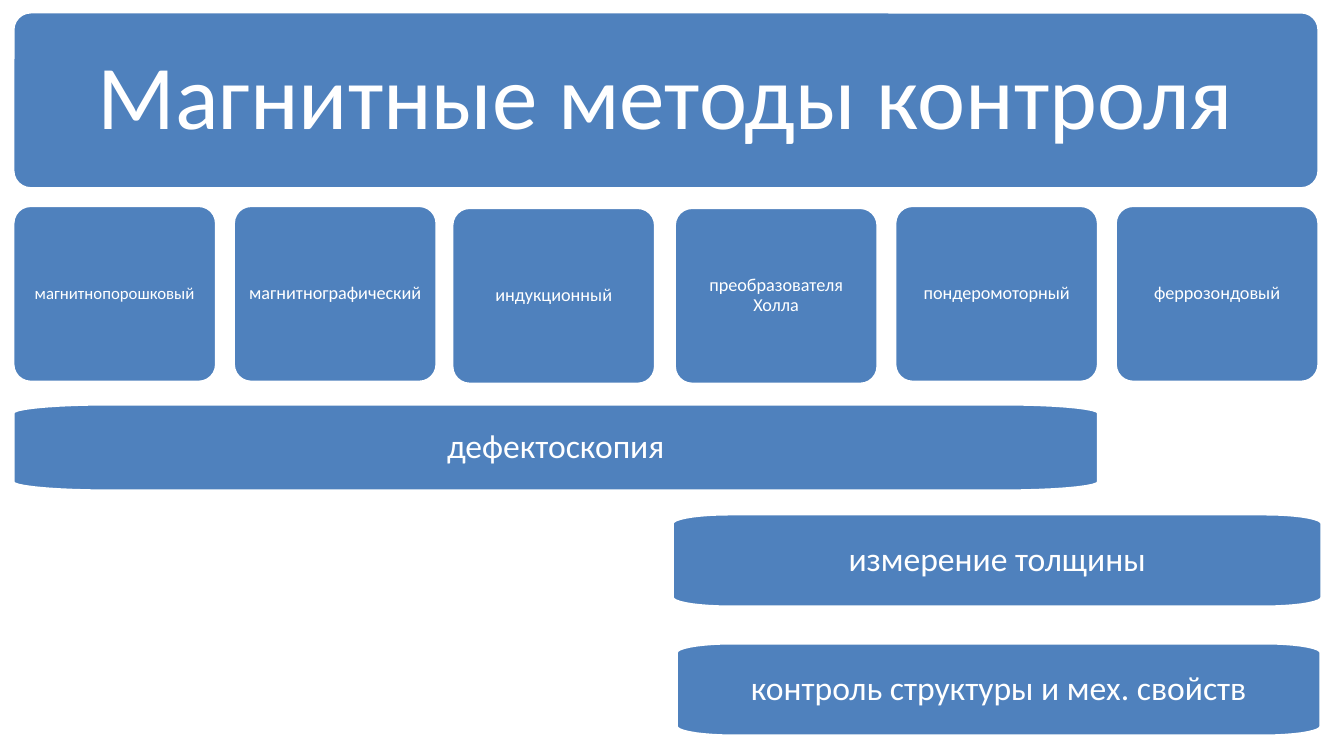
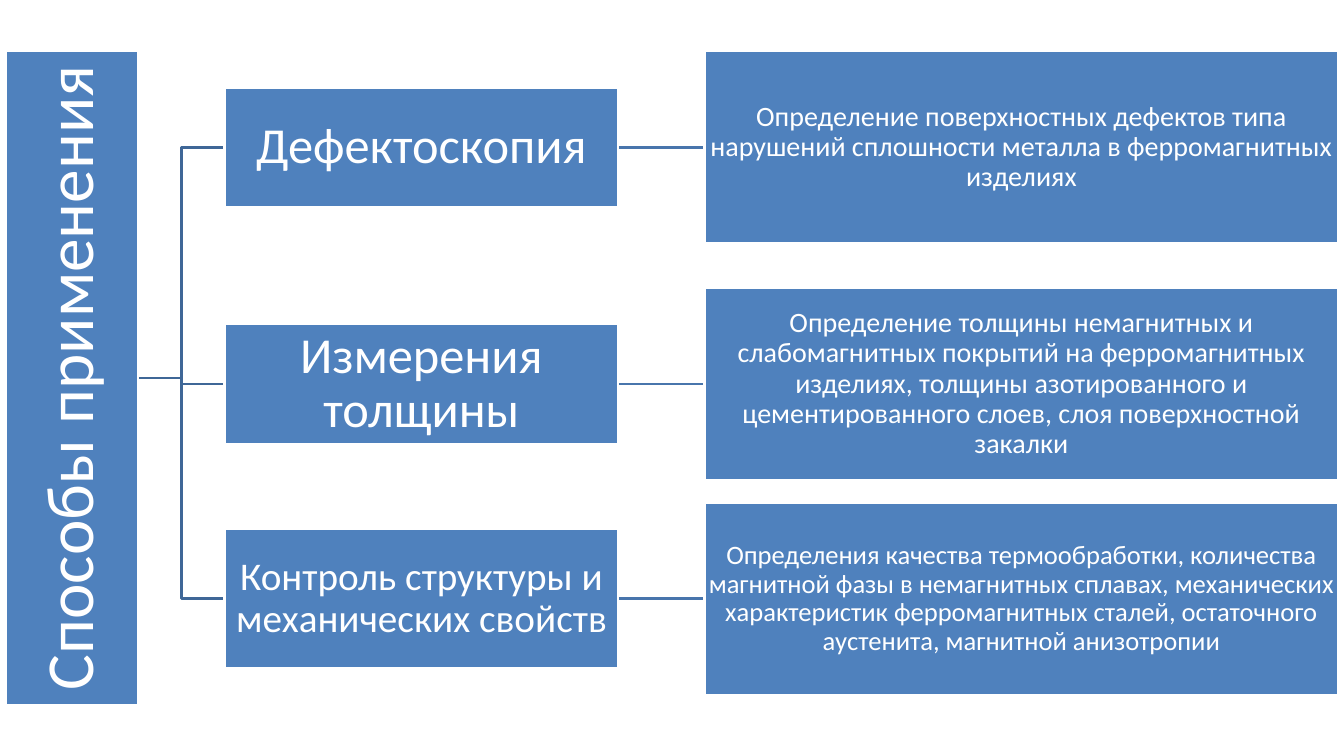
"""Build two slides on magnetic testing methods and their uses."""
from dataclasses import dataclass
from math import cos, radians, sin

from lxml.etree import SubElement
from pptx import Presentation
from pptx.dml.color import RGBColor as Color
from pptx.enum.shapes import MSO_CONNECTOR as Link, MSO_SHAPE as Shape
from pptx.enum.text import MSO_ANCHOR as Anchor, PP_ALIGN as Align
from pptx.oxml.ns import qn
from pptx.util import Inches, Pt


@dataclass(frozen=True)
class Theme:
    font: str = "Calibri"
    fill: Color = Color(0x4F, 0x81, 0xBD)
    paper: Color = Color(0xFF, 0xFF, 0xFF)
    branch: Color = Color(0x3F, 0x67, 0x97)
    twig: Color = Color(0x48, 0x75, 0xAC)
    line: float = 2
    title: int = 65
    root: int = 48
    bar: int = 24
    card: int = 13


theme = Theme()


def dress(box, text, size, inset):
    """Give a box the shared fill and outline and its centred text."""
    box.shadow.inherit = False
    box.fill.solid()
    box.fill.fore_color.rgb = theme.fill
    box.line.color.rgb = theme.paper
    box.line.width = Pt(theme.line)
    frame = box.text_frame
    frame.word_wrap = True
    frame.vertical_anchor = Anchor.MIDDLE
    frame.margin_left = frame.margin_right = Inches(inset)
    frame.margin_top = frame.margin_bottom = Inches(inset)
    para = frame.paragraphs[0]
    para.alignment = Align.CENTER
    para.line_spacing = 0.9
    span = para.add_run()
    span.text = text
    span.font.name = theme.font
    span.font.size = Pt(size)
    span.font.color.rgb = theme.paper


def barrel(page, left, top, width, height):
    """Draw a bar whose corners are stretched quarter ellipses."""
    reach, rise = 0.0864 * width, 0.1 * height
    near, far = left + reach, left + width - reach
    high, low = top + rise, top + height - rise
    corners = [(near, high, 180), (far, high, 270), (far, low, 0), (near, low, 90)]
    points = [
        (Inches(x + reach * cos(radians(start + turn))),
         Inches(y + rise * sin(radians(start + turn))))
        for x, y, start in corners
        for turn in range(0, 91, 10)
    ]
    builder = page.shapes.build_freeform(*points[0])
    builder.add_line_segments(points[1:], close=True)
    return builder.convert_to_shape()


deck = Presentation()
deck.slide_width, deck.slide_height = Inches(13.33), Inches(7.5)
blank = deck.slide_layouts[6]

page = deck.slides.add_slide(blank)
margin, span_width, gap, row_height = 0.13, 12.95, 0.17, 1.75
methods = [
    ("магнитнопорошковый", 12, 0, 0),
    ("магнитнографический", theme.card, 0, 0),
    ("индукционный", theme.card, -0.02, 0.02),
    ("преобразователя Холла", theme.card, 0, 0.02),
    ("пондеромоторный", theme.card, 0, 0),
    ("феррозондовый", theme.card, 0, 0),
]
pitch = (span_width + gap) / len(methods)
cards = [("Магнитные методы контроля", theme.title, margin, 0.12, span_width, 0.27)]
for column, (text, size, shift, drop) in enumerate(methods):
    left = margin + column * pitch + shift
    cards.append((text, size, left, 2.04 + drop, pitch - gap, 0.06))
for text, size, left, top, width, inset in cards:
    card = page.shapes.add_shape(
        Shape.ROUNDED_RECTANGLE, Inches(left), Inches(top), Inches(width), Inches(row_height))
    card.adjustments[0] = 0.1
    dress(card, text, size, inset)

uses = [
    ("дефектоскопия", margin, 4.01, 5 * pitch - gap, 0.86),
    ("измерение толщины", 6.67, 5.1, 6.44, 0.92),
    ("контроль структуры и мех. свойств", 6.71, 6.38, 6.39, 0.92),
]
for text, *place in uses:
    dress(barrel(page, *place), text, theme.bar, 0.11)

page = deck.slides.add_slide(blank)
root_right, root_middle, root_width, root_length = 1.37, 3.75, 1.31, 6.5
use_left, use_width = 2.23, 3.9
use_right = use_left + use_width
detail_left, detail_width, detail_height = 6.99, 6.28, 1.91
branches = [
    (1.46, 1.19, "Дефектоскопия", 36,
     "Определение поверхностных дефектов типа нарушений сплошности металла "
     "в ферромагнитных изделиях", 20),
    (3.81, 1.19, "Измерения толщины", 36,
     "Определение толщины немагнитных и слабомагнитных покрытий на ферромагнитных изделиях, "
     "толщины азотированного и цементированного слоев, слоя поверхностной закалки", 20),
    (5.94, 1.39, "Контроль структуры и механических свойств", 28,
     "Определения качества термообработки, количества магнитной фазы в немагнитных сплавах, "
     "механических характеристик ферромагнитных сталей, остаточного аустенита, "
     "магнитной анизотропии", 19),
]
for middle, height, use, use_size, detail, detail_size in branches:
    links = [
        (Link.ELBOW, root_right, root_middle, use_left, theme.branch),
        (Link.STRAIGHT, use_right, middle, detail_left, theme.twig),
    ]
    for kind, start, level, end, color in links:
        link = page.shapes.add_connector(
            kind, Inches(start), Inches(level), Inches(end), Inches(middle))
        link.line.color.rgb = color
        link.line.width = Pt(theme.line)
        SubElement(link._element.spPr, qn("a:effectLst"))
    boxes = [
        (use, use_size, use_left, use_width, height, 0.03),
        (detail, detail_size, detail_left, detail_width, detail_height, 0.01),
    ]
    for text, size, left, width, tall, inset in boxes:
        box = page.shapes.add_shape(
            Shape.RECTANGLE, Inches(left), Inches(middle - tall / 2), Inches(width), Inches(tall))
        dress(box, text, size, inset)

root_center = root_right - root_width / 2
root = page.shapes.add_shape(
    Shape.RECTANGLE, Inches(root_center - root_length / 2),
    Inches(root_middle - root_width / 2), Inches(root_length), Inches(root_width))
root.rotation = 270
dress(root, "Способы применения", theme.root, 0.03)

deck.save("out.pptx")
